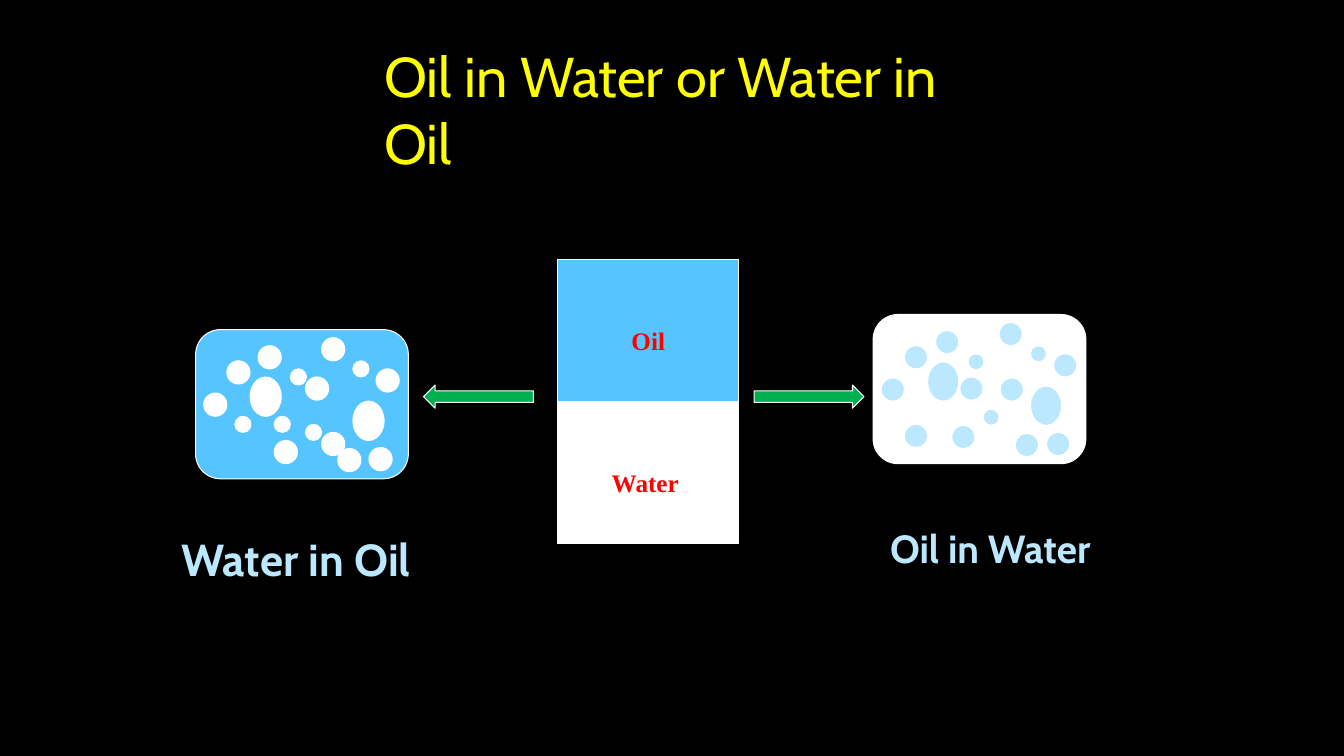
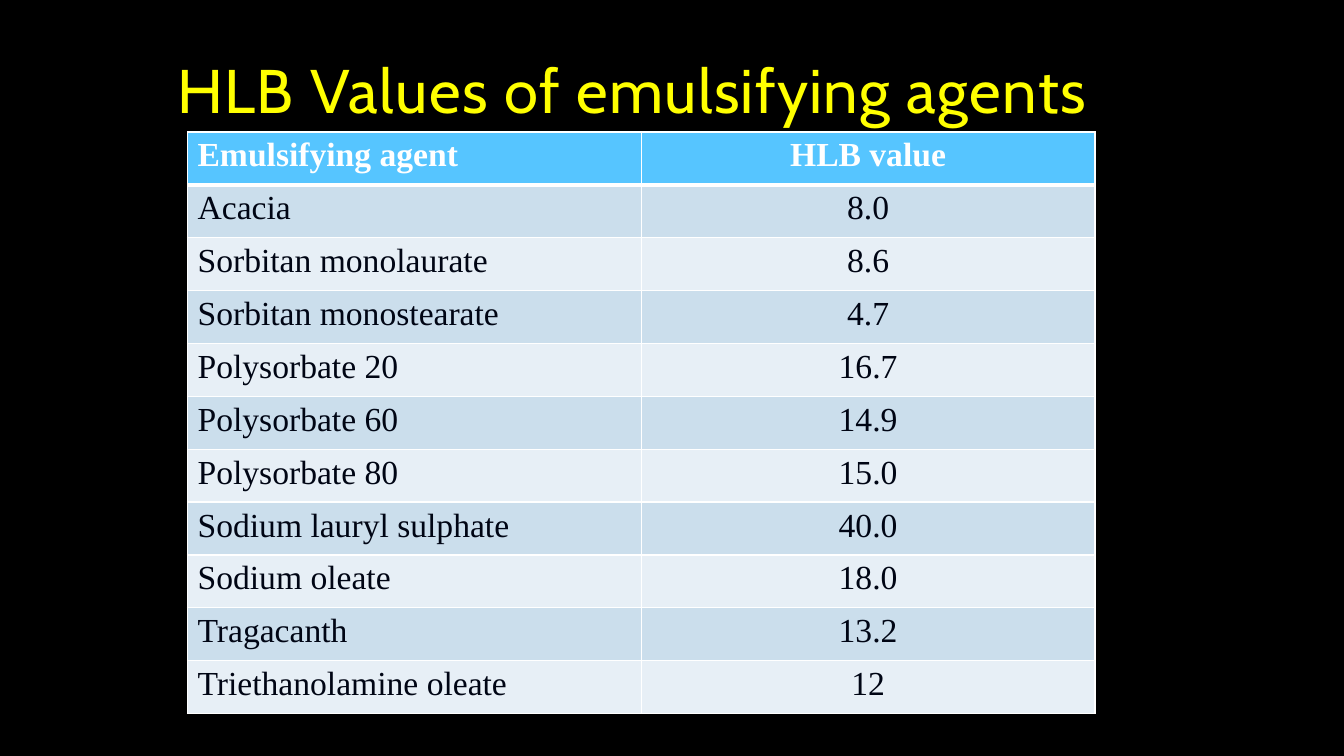
from lxml import etree
from pptx import Presentation
from pptx.dml.color import RGBColor
from pptx.enum.shapes import MSO_SHAPE
from pptx.enum.text import MSO_ANCHOR, MSO_AUTO_SIZE, PP_ALIGN
from pptx.oxml.ns import qn
from pptx.util import Inches, Pt

RECT, ROUNDED, OVAL = MSO_SHAPE.RECTANGLE, MSO_SHAPE.ROUNDED_RECTANGLE, MSO_SHAPE.OVAL
LEFT_ARROW, RIGHT_ARROW = MSO_SHAPE.LEFT_ARROW, MSO_SHAPE.RIGHT_ARROW
TOP, MIDDLE, BOTTOM = MSO_ANCHOR.TOP, MSO_ANCHOR.MIDDLE, MSO_ANCHOR.BOTTOM
LEFT, CENTER = PP_ALIGN.LEFT, PP_ALIGN.CENTER
NO_FIT = MSO_AUTO_SIZE.NONE

COLORS = {
    "back": "000000", "title": "FFFF00", "oil": "56C5FF", "water": "FFFFFF",
    "pale": "BBE8FF", "arrow": "00B050", "name": "FF0000", "line": "FFFFFF",
    "head": "FFFFFF", "body": "000514", "odd": "CBDEEC", "even": "E7EFF6",
}
HEADING, SERIF = "Cabin", "Times New Roman"

DROP_SIZES = {"S": (0.16, 0.16), "M": (0.23, 0.23), "L": (0.31, 0.39)}
SHARED_DROPS = [
    ("S", 0.94, 0.39), ("L", 1.56, 0.71), ("S", 1.09, 0.94), ("M", 0.31, 0.31),
    ("S", 1.56, 0.31), ("M", 0.62, 0.16), ("L", 0.54, 0.47), ("M", 1.25, 0.08),
    ("M", 0.08, 0.63), ("M", 1.79, 0.39), ("M", 1.72, 1.17), ("M", 1.41, 1.18),
    ("M", 0.78, 1.1),
]
WATER_DROPS = [("S", 0.39, 0.86), ("S", 0.78, 0.86), ("M", 1.09, 0.47), ("M", 1.25, 1.02)]
OIL_DROPS = [("M", 0.86, 0.62), ("M", 1.26, 0.63), ("M", 0.31, 1.09)]

HLB_ROWS = [
    ("Emulsifying agent", "HLB value"),
    ("Acacia", "8.0"),
    ("Sorbitan monolaurate", "8.6"),
    ("Sorbitan monostearate", "4.7"),
    ("Polysorbate 20", "16.7"),
    ("Polysorbate 60", "14.9"),
    ("Polysorbate 80", "15.0"),
    ("Sodium lauryl sulphate", "40.0"),
    ("Sodium oleate", "18.0"),
    ("Tragacanth", "13.2"),
    ("Triethanolamine oleate", "12"),
]


def rgb(name):
    """Return the named colour."""
    return RGBColor.from_string(COLORS[name])


def write(tf, text, size, color, font=HEADING, bold=False, align=LEFT):
    """Write one formatted paragraph and return its run."""
    p = tf.paragraphs[0]
    p.alignment = align
    r = p.add_run()
    r.text = text
    for key, value in {"size": Pt(size), "name": font, "bold": bold}.items():
        setattr(r.font, key, value)
    r.font.color.rgb = rgb(color)
    return r


def add_title(s, text, box, size, anchor, line_spacing=1.0, tracking=0):
    """Place and format the slide title."""
    sp = s.shapes.title
    sp.left, sp.top, sp.width, sp.height = map(Inches, box)
    tf = sp.text_frame
    for key, value in {"word_wrap": True, "auto_size": NO_FIT, "vertical_anchor": anchor}.items():
        setattr(tf, key, value)
    r = write(tf, text, size, "title")
    tf.paragraphs[0].line_spacing = line_spacing
    if tracking:
        r._r.get_or_add_rPr().set("spc", str(tracking * 100))


def add_outlined(s, kind, box, color):
    """Add a filled shape with a thin white outline."""
    sp = s.shapes.add_shape(kind, *map(Inches, box))
    sp.shadow.inherit = False
    sp.fill.solid()
    sp.fill.fore_color.rgb = rgb(color)
    sp.line.color.rgb = rgb("line")
    sp.line.width = Pt(0.75)
    return sp


def add_emulsion(s, x, y, base, drop, drops):
    """Draw a rounded vessel with drops placed from its corner."""
    add_outlined(s, ROUNDED, (x, y, 2.11, 1.48), base)
    for size, dx, dy in SHARED_DROPS + drops:
        add_outlined(s, OVAL, (x + dx, y + dy, *DROP_SIZES[size]), drop)


def add_layers(s, x, y, w, h):
    """Stack the oil layer on the water layer."""
    for i, (text, color) in enumerate([("Oil", "oil"), ("Water ", "water")]):
        sp = add_outlined(s, RECT, (x, y + i * h, w, h), color)
        tf = sp.text_frame
        tf.vertical_anchor = MIDDLE
        tf.margin_top, tf.margin_bottom = Inches(0.25), Inches(0.05)
        write(tf, text, 18, "name", SERIF, True, CENTER)


def add_label(s, text, box, size):
    """Add the caption of a vessel."""
    tf = s.shapes.add_textbox(*map(Inches, box)).text_frame
    tf.word_wrap = False
    write(tf, text, size, "pale", bold=True)


def set_borders(cell, widths):
    """Draw the white cell borders, with widths in points by side."""
    tc_pr = cell._tc.get_or_add_tcPr()
    for side, width in widths.items():
        ln = etree.SubElement(tc_pr, qn(f"a:ln{side}"), w=str(Pt(width)))
        fill = etree.SubElement(ln, qn("a:solidFill"))
        etree.SubElement(fill, qn("a:srgbClr"), val=COLORS["line"])


def add_hlb_table(s, x, y, w, h):
    """Add the banded table of HLB values."""
    count = len(HLB_ROWS)
    table = s.shapes.add_table(count, 2, *map(Inches, (x, y, w, h))).table
    for i, row in enumerate(HLB_ROWS):
        table.rows[i].height = Inches(h / count)
        head = i == 0
        band = "oil" if head else "odd" if i % 2 else "even"
        for j, text in enumerate(row):
            cell = table.cell(i, j)
            set_borders(cell, {"L": 1, "R": 1, "T": 3 if i == 1 else 1, "B": 3 if head else 1})
            cell.fill.solid()
            cell.fill.fore_color.rgb = rgb(band)
            write(cell.text_frame, text, 24, "head" if head else "body",
                  SERIF, head, CENTER if j else LEFT)


def emulsion_slide(prs):
    """Build the slide on the two emulsion types."""
    s = prs.slides.add_slide(prs.slide_layouts[5])
    add_title(s, "Oil in Water or Water in Oil", (3.71, 0.36, 6.42, 1.4), 40, TOP)
    add_emulsion(s, 1.94, 3.27, "oil", "water", WATER_DROPS)
    add_emulsion(s, 8.66, 3.12, "water", "pale", OIL_DROPS)
    add_layers(s, 5.53, 2.57, 1.8, 1.41)
    for kind, x in [(LEFT_ARROW, 4.2), (RIGHT_ARROW, 7.48)]:
        add_outlined(s, kind, (x, 3.82, 1.09, 0.23), "arrow")
    add_label(s, "Oil in Water", (8.73, 5.15, 2.2, 0.57), 28)
    add_label(s, "Water in Oil", (1.7, 5.23, 2.49, 0.64), 32)


def hlb_slide(prs):
    """Build the slide with the table of HLB values."""
    s = prs.slides.add_slide(prs.slide_layouts[5])
    add_title(s, "HLB Values of emulsifying agents", (1.66, 0.42, 10, 0.89), 44, BOTTOM, 0.9, 1)
    add_hlb_table(s, 1.86, 1.31, 9, 5.77)


def main():
    """Build and save the presentation."""
    prs = Presentation()
    prs.slide_width, prs.slide_height = Inches(13.33), Inches(7.5)
    fill = prs.slide_master.background.fill
    fill.solid()
    fill.fore_color.rgb = rgb("back")
    emulsion_slide(prs)
    hlb_slide(prs)
    prs.save("out.pptx")


if __name__ == "__main__":
    main()
